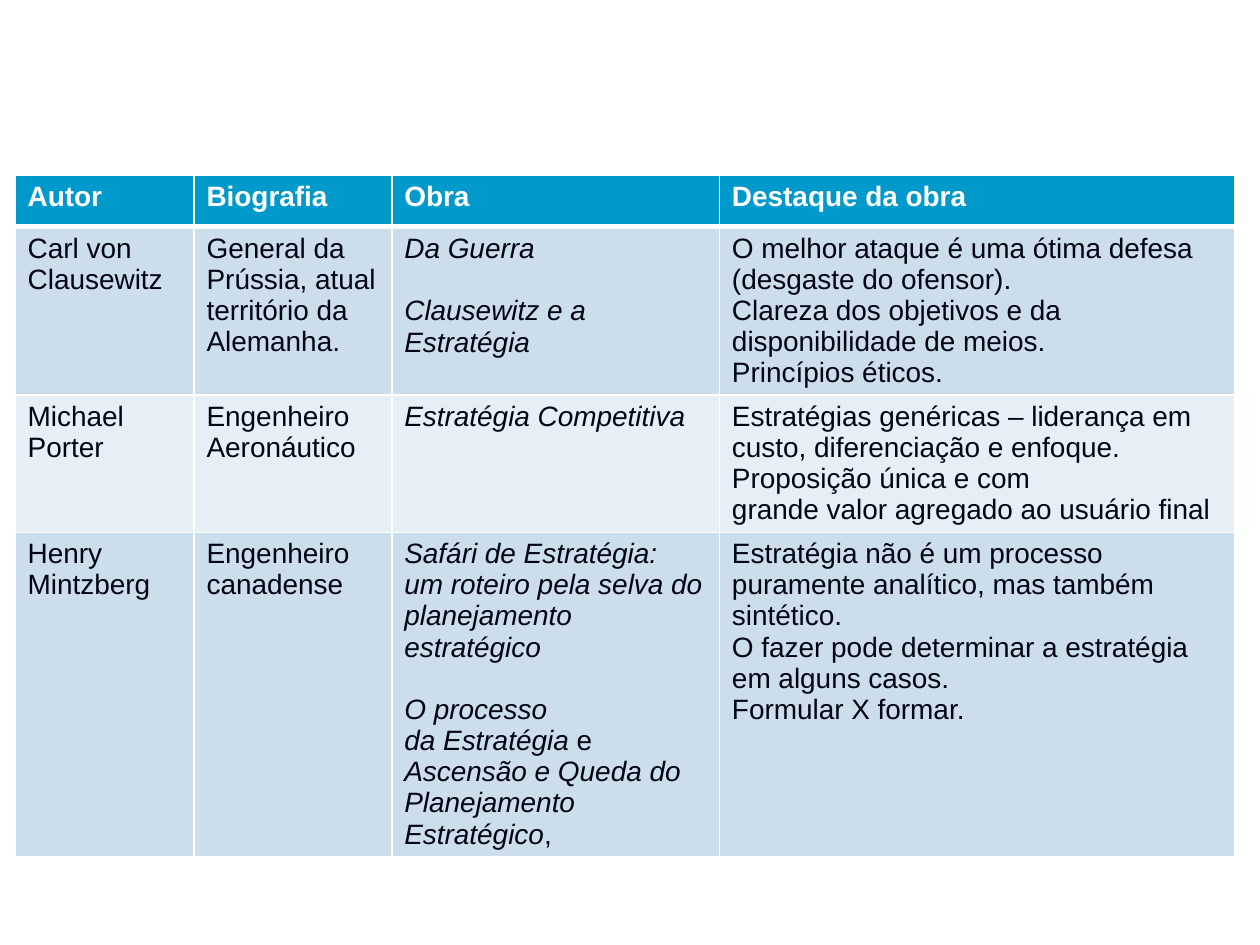
from lxml import etree
from pptx import Presentation
from pptx import util as u
from pptx.dml.color import RGBColor
from pptx.oxml import ns

COLORS = {
    "header": "0099CC",
    "odd": "CCDEEC",
    "even": "E7EFF6",
    "header_text": "FFFFFF",
    "body_text": "000514",
    "border": "FFFFFF",
}
COLUMN_WIDTHS = [1.42, 1.57, 2.6, 4.09]
ROW_HEIGHTS = [0.41, 1.33, 1.09, 2.56]
LEFT, TOP = 0.12, 1.39
FONT_SIZE = 16
GROUP_GAP = 18

# Asterisks enclose italics; a blank line separates groups of paragraphs.
ROWS = [
    ["Autor", "Biografia", "Obra", "Destaque da obra"],
    [
        "Carl von Clausewitz",
        "General da Prússia, atual território da Alemanha.",
        "*Da Guerra*\n\n*Clausewitz e a Estratégia*",
        "O melhor ataque é uma ótima defesa (desgaste do ofensor).\n"
        "Clareza dos objetivos e da disponibilidade de meios.\n"
        "Princípios éticos.",
    ],
    [
        "Michael Porter",
        "Engenheiro Aeronáutico",
        "*Estratégia Competitiva*",
        "Estratégias genéricas – liderança em\n"
        "custo, diferenciação e enfoque.\n"
        "Proposição única e com\n"
        "grande valor agregado ao usuário final",
    ],
    [
        "Henry Mintzberg",
        "Engenheiro canadense",
        "*Safári de Estratégia:*\n"
        "*um roteiro pela selva do planejamento estratégico*\n\n"
        "*O processo*\n"
        "*da Estratégia *e *Ascensão e Queda do Planejamento Estratégico*,",
        "Estratégia não é um processo puramente analítico, mas também sintético.\n"
        "O fazer pode determinar a estratégia em alguns casos.\n"
        "Formular X formar.",
    ],
]


def color(name):
    return RGBColor.from_string(COLORS[name])


def write_text(cell, content, is_header):
    frame = cell.text_frame
    paragraph = None
    for group_index, group in enumerate(content.split("\n\n")):
        for line_index, line in enumerate(group.split("\n")):
            paragraph = frame.add_paragraph() if paragraph else frame.paragraphs[0]
            if group_index and not line_index:
                paragraph.space_before = u.Pt(GROUP_GAP)
            font = paragraph.font
            font.name = "Arial"
            font.size = u.Pt(FONT_SIZE)
            font.bold = is_header
            font.color.rgb = color("header_text" if is_header else "body_text")
            for piece_index, piece in enumerate(line.split("*")):
                if piece:
                    run = paragraph.add_run()
                    run.text = piece
                    run.font.italic = piece_index % 2 == 1


def set_borders(cell, bottom_width):
    properties = cell._tc.get_or_add_tcPr()
    widths = {"lnL": 1, "lnR": 1, "lnT": 1, "lnB": bottom_width}
    for index, (side, width) in enumerate(widths.items()):
        line = etree.Element(ns.qn(f"a:{side}"), w=str(u.Pt(width)))
        fill = etree.SubElement(line, ns.qn("a:solidFill"))
        etree.SubElement(fill, ns.qn("a:srgbClr"), val=COLORS["border"])
        properties.insert(index, line)


def main():
    presentation = Presentation()
    presentation.slide_width = u.Inches(10)
    presentation.slide_height = u.Inches(7.5)
    slide = presentation.slides.add_slide(presentation.slide_layouts[6])

    table = slide.shapes.add_table(
        len(ROWS), len(COLUMN_WIDTHS), u.Inches(LEFT), u.Inches(TOP),
        u.Inches(sum(COLUMN_WIDTHS)), u.Inches(sum(ROW_HEIGHTS)),
    ).table
    for column, width in zip(table.columns, COLUMN_WIDTHS):
        column.width = u.Inches(width)

    for row_index, (row, height) in enumerate(zip(table.rows, ROW_HEIGHTS)):
        row.height = u.Inches(height)
        is_header = row_index == 0
        fill_name = "header" if is_header else ("even", "odd")[row_index % 2]
        for cell, content in zip(row.cells, ROWS[row_index]):
            cell.fill.solid()
            cell.fill.fore_color.rgb = color(fill_name)
            set_borders(cell, 3 if is_header else 1)
            write_text(cell, content, is_header)

    presentation.save("out.pptx")


if __name__ == "__main__":
    main()
